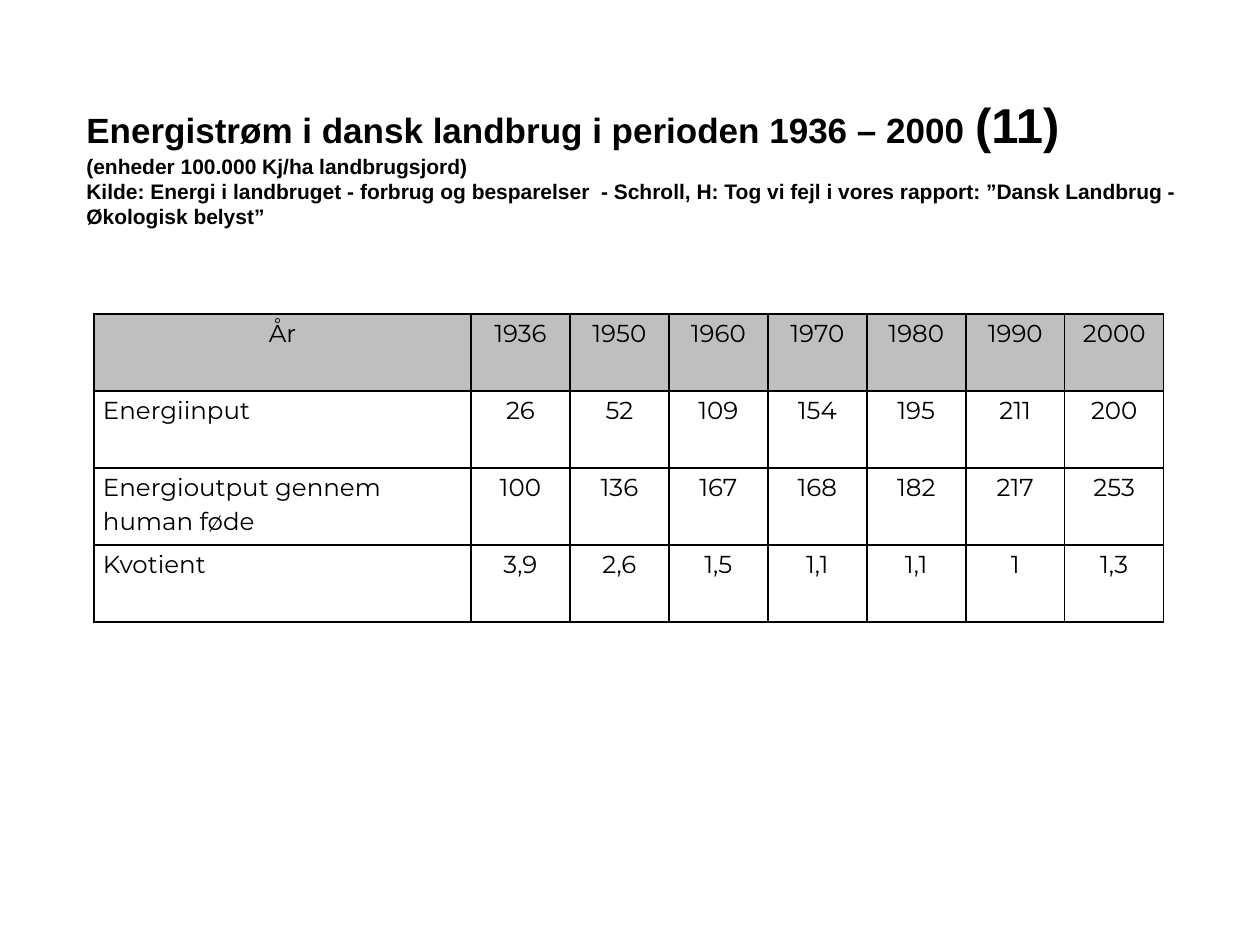
from lxml import etree
from pptx import Presentation
from pptx.dml.color import RGBColor
from pptx.enum.text import MSO_ANCHOR, PP_ALIGN
from pptx.oxml.ns import qn
from pptx.util import Emu, Pt

LEFT, CENTER = PP_ALIGN.LEFT, PP_ALIGN.CENTER
MIDDLE = MSO_ANCHOR.MIDDLE
COLORS = {"text": "000000", "border": "000000", "header": "BFBFBF"}

HEADING = [
    [("Energistrøm i dansk landbrug i perioden 1936 – 2000 ", 20), ("(11)", 28)],
    [("(enheder 100.000 Kj/ha landbrugsjord)", 12)],
    [("Kilde: Energi i landbruget - forbrug og besparelser  - Schroll, H: "
      "Tog vi fejl i vores rapport: ”Dansk Landbrug - Økologisk belyst”", 12)],
]
ENERGY_ROWS = [
    ("År", "1936", "1950", "1960", "1970", "1980", "1990", "2000"),
    ("Energiinput", "26", "52", "109", "154", "195", "211", "200"),
    ("Energioutput gennem human føde", "100", "136", "167", "168", "182", "217", "253"),
    ("Kvotient", "3,9", "2,6", "1,5", "1,1", "1,1", "1", "1,3"),
]
HEADING_BOX = (74, 87, 1121, 149)
TABLE_LEFT, TABLE_TOP = 94, 314
LABEL_WIDTH, YEAR_WIDTH, ROW_HEIGHT = 377, 99, 77
CELL_INSET = 9


def px(length):
    return Emu(round(length * 914400 / 126))


def add_text(paragraph, text, *, size, font, bold=False, align=LEFT, spacing=None):
    paragraph.alignment = align
    paragraph.line_spacing = spacing
    run = paragraph.add_run()
    run.text = text
    run.font.size = Pt(size)
    run.font.name = font
    run.font.bold = bold
    run.font.color.rgb = RGBColor.from_string(COLORS["text"])


def set_borders(cell):
    properties = cell._tc.get_or_add_tcPr()
    for position, side in enumerate(("lnL", "lnR", "lnT", "lnB")):
        line = etree.Element(qn(f"a:{side}"), w=str(Pt(1)))
        fill = etree.SubElement(line, qn("a:solidFill"))
        etree.SubElement(fill, qn("a:srgbClr"), val=COLORS["border"])
        properties.insert(position, line)


def add_heading(slide):
    box = slide.shapes.add_textbox(*map(px, HEADING_BOX))
    frame = box.text_frame
    frame.word_wrap = True
    frame.vertical_anchor = MIDDLE
    for index, runs in enumerate(HEADING):
        paragraph = frame.add_paragraph() if index else frame.paragraphs[0]
        for text, size in runs:
            add_text(paragraph, text, size=size, font="Arial", bold=True)


def add_energy_table(slide):
    widths = [LABEL_WIDTH] + [YEAR_WIDTH] * (len(ENERGY_ROWS[0]) - 1)
    table = slide.shapes.add_table(
        len(ENERGY_ROWS), len(widths), px(TABLE_LEFT), px(TABLE_TOP),
        px(sum(widths)), px(ROW_HEIGHT * len(ENERGY_ROWS))).table
    table.horz_banding = False
    table.first_row = False
    for column, width in zip(table.columns, widths):
        column.width = px(width)
    for row_index, values in enumerate(ENERGY_ROWS):
        table.rows[row_index].height = px(ROW_HEIGHT)
        for column_index, value in enumerate(values):
            cell = table.cell(row_index, column_index)
            cell.margin_left = cell.margin_right = px(CELL_INSET)
            cell.margin_top = cell.margin_bottom = 0
            if row_index == 0:
                cell.fill.solid()
                cell.fill.fore_color.rgb = RGBColor.from_string(COLORS["header"])
            else:
                cell.fill.background()
            set_borders(cell)
            is_label = row_index > 0 and column_index == 0
            add_text(cell.text_frame.paragraphs[0], value, size=14, font="Montserrat",
                     align=LEFT if is_label else CENTER, spacing=1.15)


def main():
    presentation = Presentation()
    presentation.slide_width, presentation.slide_height = px(1260), px(945)
    slide = presentation.slides.add_slide(presentation.slide_layouts[6])
    add_energy_table(slide)
    add_heading(slide)
    presentation.save("out.pptx")


if __name__ == "__main__":
    main()
